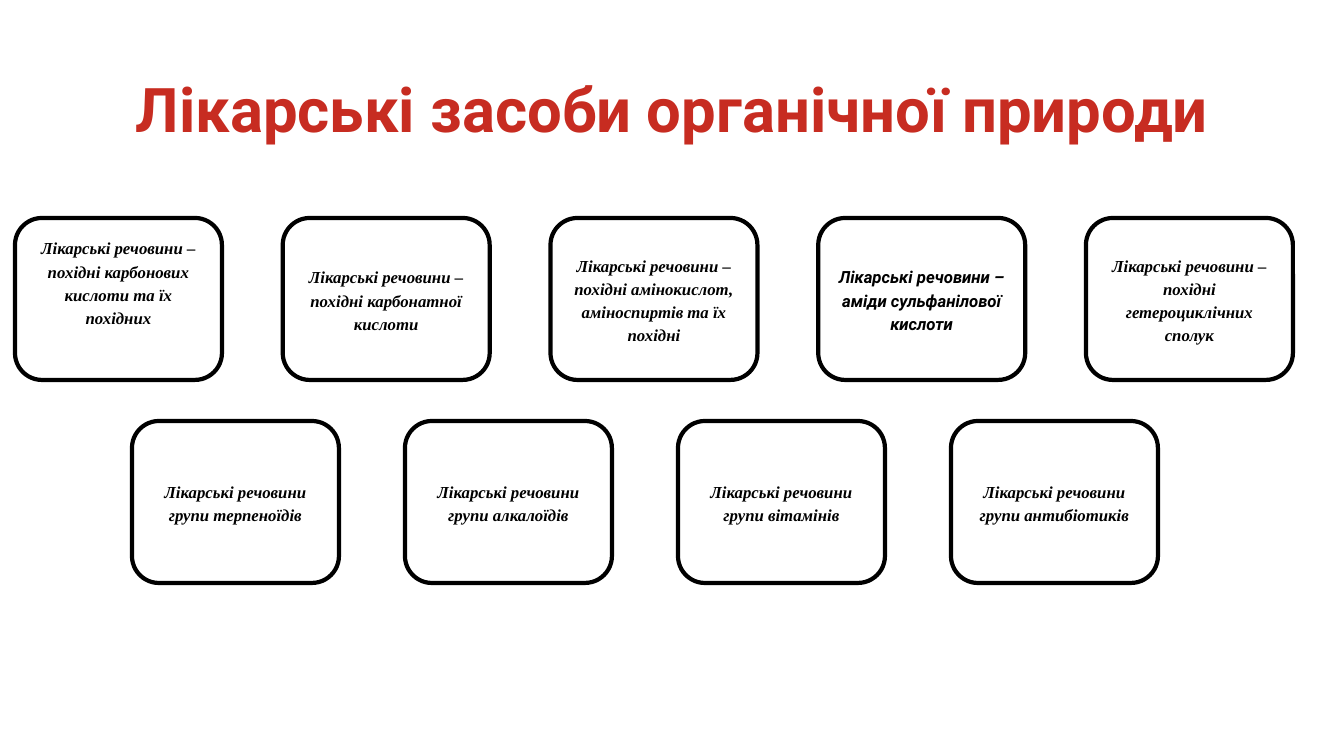
from pptx import Presentation
from pptx import util as u
from pptx.dml.color import RGBColor
from pptx.enum import shapes, text

SLIDE_W, SLIDE_H = 1344, 756
EMU_PER_PX = 12192000 / SLIDE_W

RED = RGBColor(0xC7, 0x2C, 0x21)
BLACK = RGBColor(0, 0, 0)
WHITE = RGBColor(0xFF, 0xFF, 0xFF)
SANS, SERIF = "Roboto", "Times New Roman"

TITLE = "Лікарські засоби органічної природи"
TITLE_BOX = (93, 40, 1159, 146)

CARD_W, CARD_H = 207, 162
# Each group: wording, font, bottom inset in px
ROWS = [
    {"first_left": 15, "last_left": 1086, "top": 218, "groups": [
        ("Лікарські речовини – похідні карбонових кислоти та їх похідних", SERIF, 40),
        ("Лікарські речовини – похідні карбонатної кислоти", SERIF, 5),
        ("Лікарські речовини – похідні амінокислот, аміноспиртів та їх похідні", SERIF, 5),
        ("Лікарські речовини – аміди сульфанілової кислоти", SANS, 5),
        ("Лікарські речовини – похідні гетероциклічних сполук", SERIF, 5),
    ]},
    {"first_left": 132, "last_left": 951, "top": 421, "groups": [
        ("Лікарські речовини групи терпеноїдів", SERIF, 5),
        ("Лікарські речовини групи алкалоїдів", SERIF, 5),
        ("Лікарські речовини групи вітамінів", SERIF, 5),
        ("Лікарські речовини групи антибіотиків", SERIF, 5),
    ]},
]


def px(length):
    return u.Emu(round(length * EMU_PER_PX))


def write(holder, words, *, font, size, color, italic=False,
          line_spacing=1.0, space_after=0, bottom=5):
    frame = holder.text_frame
    frame.word_wrap = True
    frame.vertical_anchor = text.MSO_ANCHOR.MIDDLE
    frame.margin_bottom = px(bottom)
    paragraph = frame.paragraphs[0]
    paragraph.alignment = text.PP_ALIGN.CENTER
    paragraph.line_spacing = line_spacing
    paragraph.space_after = u.Pt(space_after)
    run = paragraph.add_run()
    run.text = words
    run.font.name = font
    run.font.size = u.Pt(size)
    run.font.bold = True
    run.font.italic = italic
    run.font.color.rgb = color


def add_card(slide, left, top, words, font, bottom):
    card = slide.shapes.add_shape(shapes.MSO_SHAPE.ROUNDED_RECTANGLE,
                                  px(left), px(top), px(CARD_W), px(CARD_H))
    card.shadow.inherit = False
    card.fill.solid()
    card.fill.fore_color.rgb = WHITE
    card.line.color.rgb = BLACK
    card.line.width = u.Pt(3)
    write(card, words, font=font, size=12, color=BLACK, italic=True,
          line_spacing=1.15, space_after=10, bottom=bottom)


def main():
    deck = Presentation()
    deck.slide_width, deck.slide_height = px(SLIDE_W), px(SLIDE_H)
    slide = deck.slides.add_slide(deck.slide_layouts[6])

    title = slide.shapes.add_textbox(*map(px, TITLE_BOX))
    write(title, TITLE, font=SANS, size=44, color=RED, line_spacing=0.9)

    for row in ROWS:
        pitch = (row["last_left"] - row["first_left"]) / (len(row["groups"]) - 1)
        for column, group in enumerate(row["groups"]):
            add_card(slide, row["first_left"] + column * pitch, row["top"], *group)

    deck.save("out.pptx")


if __name__ == "__main__":
    main()
